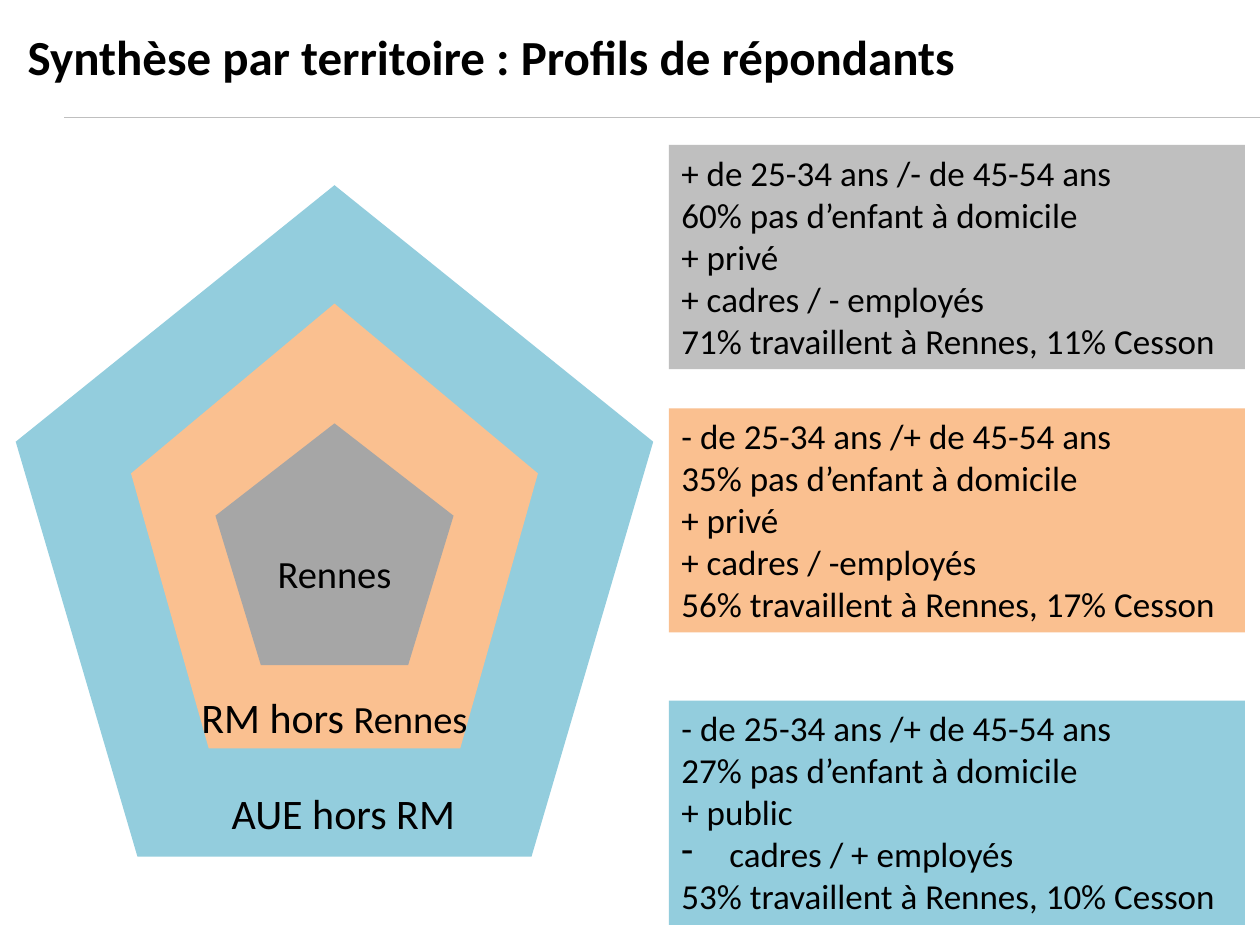
from dataclasses import dataclass

from lxml.etree import SubElement
from pptx import Presentation
from pptx.dml.color import RGBColor
from pptx.enum.shapes import MSO_CONNECTOR as Connector, MSO_SHAPE as Preset
from pptx.enum.text import MSO_ANCHOR as Anchor, PP_ALIGN as Align
from pptx.oxml.ns import qn
from pptx.util import Inches, Pt

# The slide is a grid of 100 columns by 75 rows
COLUMNS, ROWS = 100, 75
WIDTH, HEIGHT = Inches(10), Inches(7.5)


@dataclass(frozen=True)
class Theme:
    font: str = "Calibri"
    text: str = "000000"
    rule: str = "BFBFBF"
    city: str = "A6A6A6"
    city_panel: str = "BFBFBF"
    metropolis: str = "FAC090"
    urban_area: str = "93CDDD"
    title_size: int = 28
    zone_size: int = 24
    city_size: int = 22
    panel_size: int = 20


THEME = Theme()
PENTAGON_CENTRE = 26.55
PANEL_LEFT, PANEL_WIDTH, PANEL_HEIGHT = 53.1, 45.7, 17.8

# Top row, width, height, colour: outer to inner
PENTAGONS = [
    (14.7, 50.6, 53.3, THEME.urban_area),
    (24.1, 32.3, 35.3, THEME.metropolis),
    (33.6, 18.9, 19.2, THEME.city),
]

# Top row, colour, lines
PANELS = [
    (11.5, THEME.city_panel, [
        "+ de 25-34 ans /- de 45-54 ans",
        "60% pas d’enfant à domicile",
        "+ privé",
        "+ cadres / - employés",
        "71% travaillent à Rennes, 11% Cesson",
    ]),
    (32.4, THEME.metropolis, [
        "- de 25-34 ans /+ de 45-54 ans",
        "35% pas d’enfant à domicile",
        "+ privé",
        "+ cadres / -employés",
        "56% travaillent à Rennes, 17% Cesson",
    ]),
    (55.6, THEME.urban_area, [
        "- de 25-34 ans /+ de 45-54 ans",
        "27% pas d’enfant à domicile",
        "+ public",
        "cadres / + employés",
        "53% travaillent à Rennes, 10% Cesson",
    ]),
]
DASHED_LINE = "cadres / + employés"


def across(columns):
    return int(WIDTH * columns / COLUMNS)


def down(rows):
    return int(HEIGHT * rows / ROWS)


def box(left, top, width, height):
    return across(left), down(top), across(width), down(height)


def add_run(paragraph, text, size, bold=False):
    run = paragraph.add_run()
    run.text = text
    run.font.name = THEME.font
    run.font.size = Pt(size)
    run.font.bold = bold
    run.font.color.rgb = RGBColor.from_string(THEME.text)


def add_dash_bullet(paragraph):
    properties = paragraph._p.get_or_add_pPr()
    properties.set("marL", str(Inches(0.38)))
    properties.set("indent", str(-Inches(0.38)))
    SubElement(properties, qn("a:buChar")).set("char", "-")


def add_title(slide, text):
    title = slide.shapes.title
    title.left, title.top, title.width, title.height = box(1.2, 1.3, 96.1, 6.2)
    title.text_frame.vertical_anchor = Anchor.MIDDLE
    paragraph = title.text_frame.paragraphs[0]
    paragraph.alignment = Align.LEFT
    add_run(paragraph, text, THEME.title_size, bold=True)


def add_rule(slide, left, row):
    rule = slide.shapes.add_connector(
        Connector.STRAIGHT, across(left), down(row), WIDTH, down(row))
    rule.line.color.rgb = RGBColor.from_string(THEME.rule)
    rule.line.width = Pt(0.75)
    SubElement(rule._element.spPr, qn("a:effectLst"))


def add_filled(slide, preset, position, colour):
    shape = slide.shapes.add_shape(preset, *box(*position))
    shape.shadow.inherit = False
    shape.fill.solid()
    shape.fill.fore_color.rgb = RGBColor.from_string(colour)
    shape.line.fill.background()
    return shape


def add_pentagon(slide, top, width, height, colour):
    left = PENTAGON_CENTRE - width / 2
    return add_filled(slide, Preset.REGULAR_PENTAGON, (left, top, width, height), colour)


def add_label(slide, position, runs, alignment):
    label = slide.shapes.add_textbox(*box(*position))
    label.text_frame.word_wrap = True
    paragraph = label.text_frame.paragraphs[0]
    paragraph.alignment = alignment
    for text, size in runs:
        add_run(paragraph, text, size)


def add_panel(slide, top, colour, lines):
    position = (PANEL_LEFT, top, PANEL_WIDTH, PANEL_HEIGHT)
    frame = add_filled(slide, Preset.RECTANGLE, position, colour).text_frame
    frame.word_wrap = True
    frame.vertical_anchor = Anchor.TOP
    for index, line in enumerate(lines):
        paragraph = frame.add_paragraph() if index else frame.paragraphs[0]
        paragraph.alignment = Align.LEFT
        if line == DASHED_LINE:
            add_dash_bullet(paragraph)
        add_run(paragraph, line, THEME.panel_size)


def main():
    presentation = Presentation()
    presentation.slide_width, presentation.slide_height = WIDTH, HEIGHT
    slide = presentation.slides.add_slide(presentation.slide_layouts[5])

    # Heading
    add_rule(slide, 5.1, 9.3)
    add_title(slide, "Synthèse par territoire : Profils de répondants")

    # Nested territories
    pentagons = [add_pentagon(slide, *pentagon) for pentagon in PENTAGONS]
    city_frame = pentagons[-1].text_frame
    city_frame.vertical_anchor = Anchor.MIDDLE
    city_frame.paragraphs[0].alignment = Align.CENTER
    add_run(city_frame.paragraphs[0], "Rennes", THEME.city_size)
    add_label(slide, (15, 54.4, 24.4, 5),
              [("RM hors ", THEME.zone_size), ("Rennes", THEME.city_size)], Align.LEFT)
    add_label(slide, (11.9, 62, 30.7, 5),
              [("AUE hors RM", THEME.zone_size)], Align.CENTER)

    # Respondent profiles
    for panel in PANELS:
        add_panel(slide, *panel)

    presentation.save("out.pptx")


if __name__ == "__main__":
    main()
